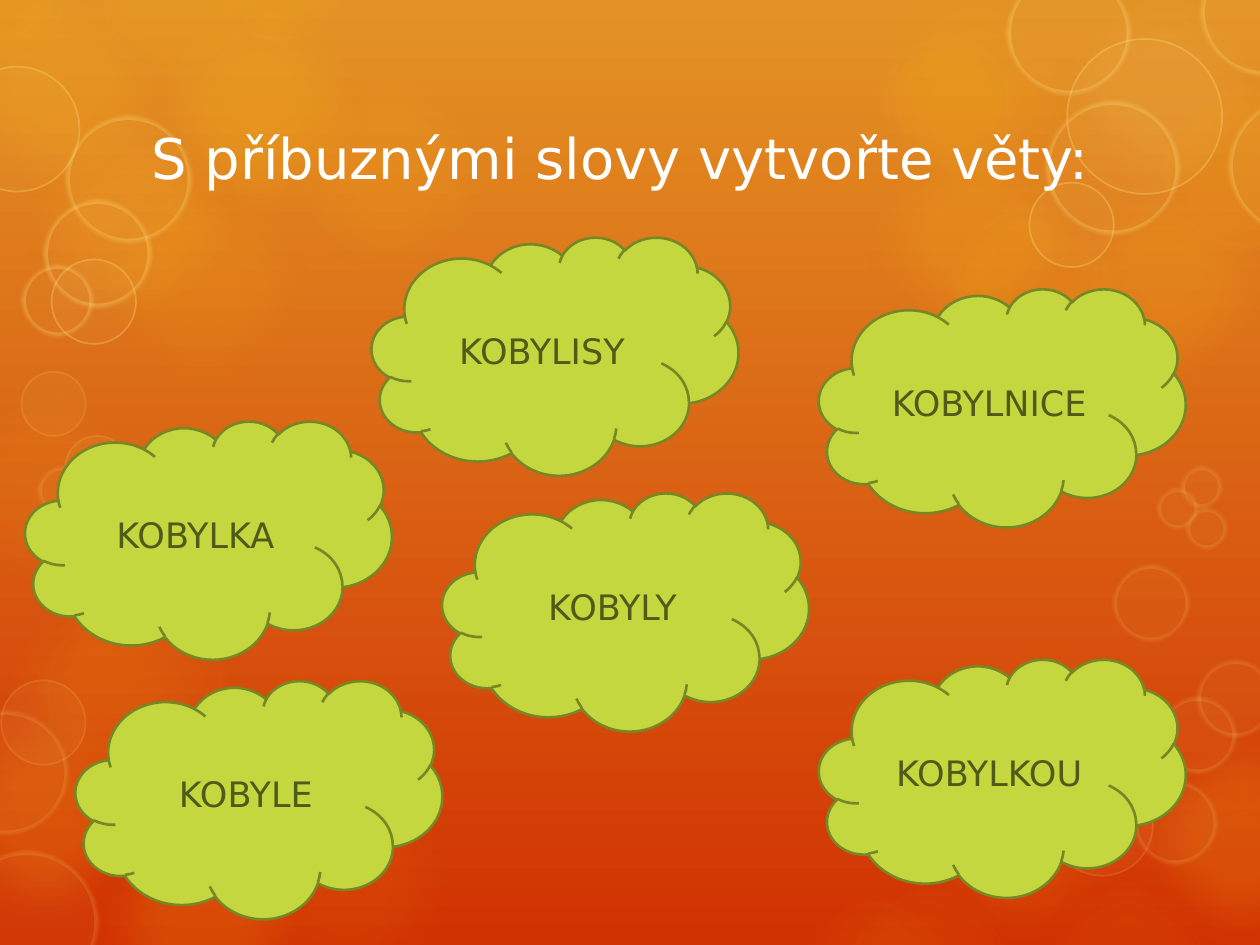
from pptx import Presentation
from pptx.dml.color import RGBColor
from pptx.enum.shapes import MSO_SHAPE
from pptx.enum.text import MSO_ANCHOR, PP_ALIGN
from pptx.oxml.ns import qn
from pptx.util import Inches, Pt
from lxml import etree

OVAL, CLOUD = MSO_SHAPE.OVAL, MSO_SHAPE.CLOUD
MIDDLE = MSO_ANCHOR.MIDDLE
LEFT, CENTER = PP_ALIGN.LEFT, PP_ALIGN.CENTER

FONT = "DejaVu Sans"
SKY = RGBColor(0xE3, 0x93, 0x25)
GROUND = RGBColor(0xD1, 0x32, 0x02)
AMBER = RGBColor(0xFD, 0xC6, 0x1B)
PALE = RGBColor(0xFF, 0xE2, 0x81)
CREAM = RGBColor(0xFE, 0xEB, 0xAE)
WHITE = RGBColor(0xFF, 0xFF, 0xFF)
LIME = RGBColor(0xC4, 0xD7, 0x3F)
OLIVE = RGBColor(0x77, 0x87, 0x26)
MOSS = RGBColor(0x50, 0x5B, 0x19)

GLOW_SIZE = 2.09
GLOWS = {
    5: [(7.29, 4.77)],
    8: [(-0.26, 4.42), (0.77, 5.24), (1.73, 5.96), (-0.7, 2.82)],
    10: [(0.57, 1.2), (2.05, 0.31), (6.69, -0.29), (7.06, 5.62)],
    14: [(-0.56, -0.32)],
    15: [(0, 0.72), (8.2, 1.2), (6.69, 0.86)],
    16: [(0.57, 6.27), (8.81, 5.62), (-0.69, 5.41)],
    20: [(1.01, -0.18)],
}

HALO = {"fill": AMBER, "line": CREAM, "width": 14, "soft": 12}
STRONG_HALO = {**HALO, "fill_alpha": 10, "line_alpha": 6}
WEAK_HALO = {**HALO, "fill_alpha": 6, "line_alpha": 4}
RING = {"fill": PALE, "fill_alpha": 5, "line": PALE}
THIN_RING = {**RING, "width": 1, "soft": 0}
THICK_RING = {**RING, "width": 5, "soft": 2.5}

CIRCLES = [
    ({"fill": PALE, "fill_alpha": 10, "soft": 25}, [(8.2, -0.32, GLOW_SIZE)]),
    ({"fill": AMBER, "fill_alpha": 10, "soft": 25}, [(6.75, 2.62, 1.33)]),
    (STRONG_HALO, [
        (9.18, 0.65, 1.37), (6.94, 0.23, 1.14), (7.52, 1.59, 1.33), (7.89, 2.24, 1.14),
        (8.47, 2.91, 0.79), (0.75, -0.66, 1.31), (1.64, -0.75, 1.14), (-0.57, -0.58, 1.14)]),
    (WEAK_HALO, [
        (0.3, 4.73, 1.53), (6.32, 7.1, 1.25), (6.69, 7.01, 1.37), (8.27, 7.01, 1.37)]),
    ({**THIN_RING, "line_alpha": 30}, [
        (-0.36, 0.53, 0.99), (0.41, 2.06, 0.67), (8.47, 0.31, 1.23), (8.17, 1.45, 0.67)]),
    ({**THIN_RING, "line_alpha": 15}, [
        (0.01, 5.4, 0.67), (8.34, 6.14, 0.81), (8.2, 5.39, 0.81), (0.17, 2.95, 0.51),
        (0.52, 3.46, 0.5)]),
    ({**THICK_RING, "line_alpha": 30}, [
        (0.52, 0.92, 1), (0.35, 1.59, 0.85), (0.17, 2.1, 0.57), (7.99, -0.23, 0.98),
        (9.53, -0.4, 1), (9.75, 0.77, 1.1), (8.3, 0.8, 1.06)]),
    ({**THICK_RING, "line_alpha": 15}, [
        (-0.35, 6.75, 1.13), (-0.44, 5.64, 0.98), (7.63, 5.73, 0.81), (9, 6.2, 0.66),
        (8.83, 4.48, 0.61), (9.2, 5.53, 0.61), (9.5, 5.24, 0.61), (9.37, 3.7, 0.33),
        (9.18, 3.87, 0.33), (9.41, 4.03, 0.33), (0.3, 3.7, 0.39)]),
]

CLOUDS = [
    ("KOBYLKA", 0.2, 3.34),
    ("KOBYLE", 0.6, 5.4),
    ("KOBYLISY", 2.95, 1.88),
    ("KOBYLY", 3.51, 3.91),
    ("KOBYLKOU", 6.5, 5.23),
    ("KOBYLNICE", 6.5, 2.29),
]


def paint_background(page):
    """Fill the page with a gradient running from top to bottom."""
    fill = page.background.fill
    fill.gradient()
    fill.gradient_angle = 270
    for stop, color, position in zip(fill.gradient_stops, (SKY, GROUND), (0, 1)):
        stop.color.rgb = color
        stop.position = position


def add_shape(page, kind, left, top, width, height, fill, line=None, line_width=0):
    """Add a flat preset shape with a fill and an optional outline."""
    shape = page.shapes.add_shape(kind, *map(Inches, (left, top, width, height)))
    shape.shadow.inherit = False
    shape.fill.solid()
    shape.fill.fore_color.rgb = fill
    if line is None:
        shape.line.fill.background()
    else:
        shape.line.color.rgb = line
        shape.line.width = Pt(line_width)
    return shape


def add_circle(page, left, top, size, style):
    """Add a translucent circle, with blurred edges if the style has them."""
    shape = add_shape(page, OVAL, left, top, size, size,
                      style["fill"], style.get("line"), style.get("width", 0))
    properties = shape.element.spPr
    alphas = (style["fill_alpha"], style.get("line_alpha"))
    for color, alpha in zip(properties.iter(qn("a:srgbClr")), alphas):
        etree.SubElement(color, qn("a:alpha"), val=str(alpha * 1000))
    if style["soft"]:
        effects = properties.find(qn("a:effectLst"))
        etree.SubElement(effects, qn("a:softEdge"), rad=str(Pt(style["soft"])))


def write_text(shape, text, size, color, alignment):
    """Write one vertically centred line of text into a shape."""
    frame = shape.text_frame
    frame.word_wrap = True
    frame.vertical_anchor = MIDDLE
    para = frame.paragraphs[0]
    para.alignment = alignment
    span = para.add_run()
    span.text = text
    for name, value in {"name": FONT, "size": Pt(size)}.items():
        setattr(span.font, name, value)
    span.font.color.rgb = color


def add_title(page, text):
    """Place the title in front of the background circles."""
    title = page.shapes.title
    place = {"left": 1.1, "top": 0.74, "width": 7.79, "height": 1.01}
    for name, value in place.items():
        setattr(title, name, Inches(value))
    write_text(title, text, 32, WHITE, LEFT)
    title.element.getparent().append(title.element)


def add_cloud(page, word, left, top):
    """Add a green cloud holding one word."""
    cloud = add_shape(page, CLOUD, left, top, 2.91, 1.89, LIME, OLIVE, 1.5)
    write_text(cloud, word, 20, MOSS, CENTER)


def main():
    """Build and save the deck."""
    deck = Presentation()
    deck.slide_width, deck.slide_height = Inches(10), Inches(7.5)
    page = deck.slides.add_slide(deck.slide_layouts[5])
    paint_background(page)
    for alpha, places in GLOWS.items():
        style = {"fill": AMBER, "fill_alpha": alpha, "soft": 25}
        for left, top in places:
            add_circle(page, left, top, GLOW_SIZE, style)
    for style, circles in CIRCLES:
        for left, top, size in circles:
            add_circle(page, left, top, size, style)
    add_title(page, "S příbuznými slovy vytvořte věty:")
    for word, left, top in CLOUDS:
        add_cloud(page, word, left, top)
    deck.save("out.pptx")


if __name__ == "__main__":
    main()
